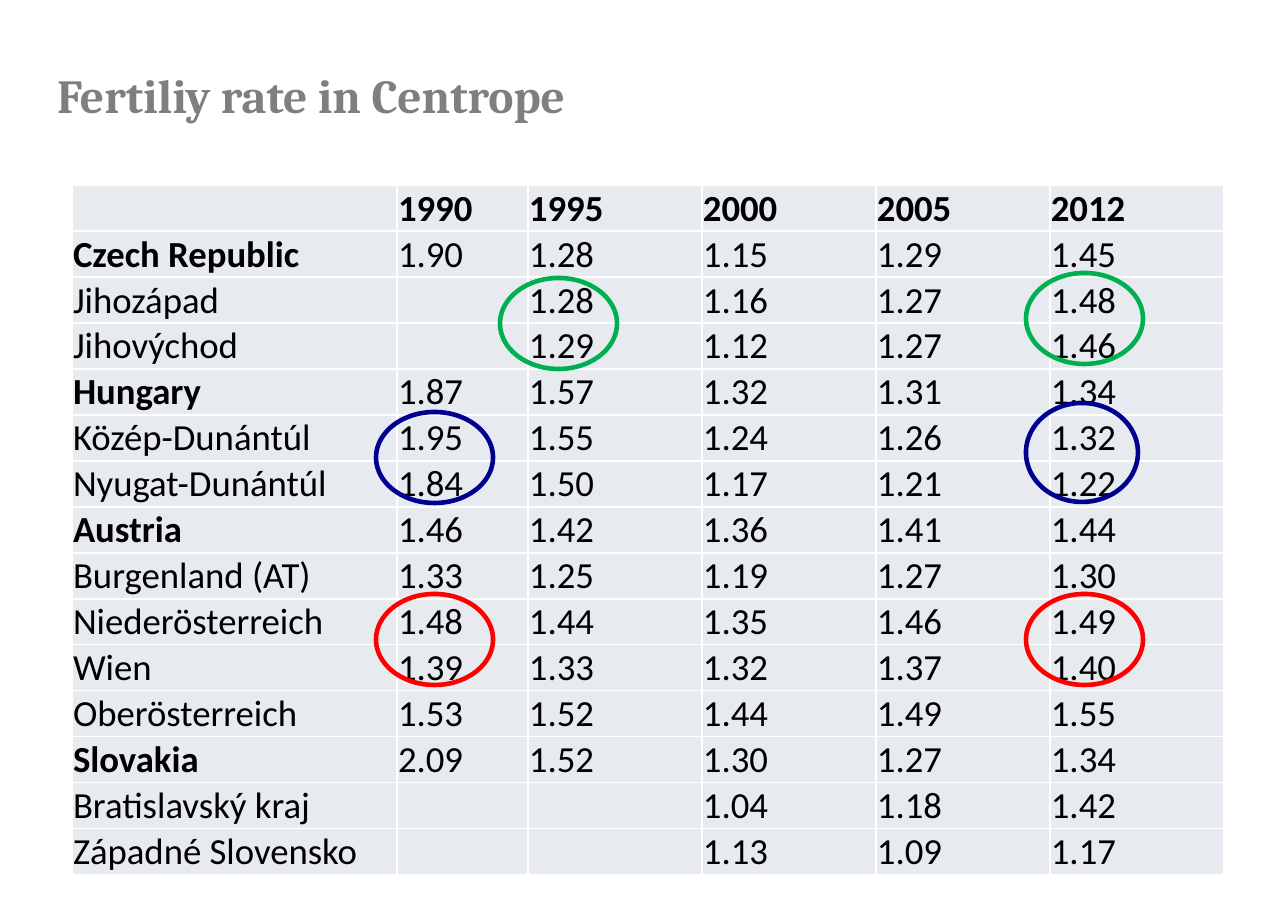
from lxml.etree import SubElement
from pptx import Presentation
from pptx.dml.color import RGBColor
from pptx.enum.shapes import MSO_SHAPE as Shape
from pptx.enum.text import MSO_ANCHOR as Anchor, MSO_AUTO_SIZE as AutoSize, PP_ALIGN as Align
from pptx.oxml.ns import qn
from pptx.util import Pt

PX = 8298
BLACK = RGBColor(0x00, 0x00, 0x00)
WHITE = RGBColor(0xFF, 0xFF, 0xFF)
GRAY = RGBColor(0x7F, 0x7F, 0x7F)
PALE = RGBColor(0xE7, 0xEA, 0xEF)
BLUE = RGBColor(0x00, 0x00, 0x90)
RED = RGBColor(0xFF, 0x00, 0x00)
GREEN = RGBColor(0x00, 0xB0, 0x50)

TITLE_FONT = {"name": "Cambria", "size": Pt(31), "bold": True}
CELL_FONT = {"name": "Calibri", "size": Pt(24)}
TITLE_FRAME = {
    "word_wrap": True,
    "auto_size": AutoSize.NONE,
    "vertical_anchor": Anchor.MIDDLE,
    "margin_left": 12 * PX,
    "margin_right": 12 * PX,
    "margin_top": 6 * PX,
    "margin_bottom": 6 * PX,
}
CELL_FORMAT = {
    "vertical_anchor": Anchor.BOTTOM,
    "margin_left": PX,
    "margin_right": PX,
    "margin_top": PX,
    "margin_bottom": 0,
}
TABLE_FORMAT = {"first_row": False, "horz_banding": False}

COLUMN_WIDTHS = [325, 131, 174, 174, 174, 174]
ROW_HEIGHT = 46
COUNTRIES = {"Czech Republic", "Hungary", "Austria", "Slovakia"}
RATES = [
    ("", "1990", "1995", "2000", "2005", "2012"),
    ("Czech Republic", "1.90", "1.28", "1.15", "1.29", "1.45"),
    ("Jihozápad", "", "1.28", "1.16", "1.27", "1.48"),
    ("Jihovýchod", "", "1.29", "1.12", "1.27", "1.46"),
    ("Hungary", "1.87", "1.57", "1.32", "1.31", "1.34"),
    ("Közép-Dunántúl", "1.95", "1.55", "1.24", "1.26", "1.32"),
    ("Nyugat-Dunántúl", "1.84", "1.50", "1.17", "1.21", "1.22"),
    ("Austria", "1.46", "1.42", "1.36", "1.41", "1.44"),
    ("Burgenland (AT)", "1.33", "1.25", "1.19", "1.27", "1.30"),
    ("Niederösterreich", "1.48", "1.44", "1.35", "1.46", "1.49"),
    ("Wien", "1.39", "1.33", "1.32", "1.37", "1.40"),
    ("Oberösterreich", "1.53", "1.52", "1.44", "1.49", "1.55"),
    ("Slovakia", "2.09", "1.52", "1.30", "1.27", "1.34"),
    ("Bratislavský kraj", "", "", "1.04", "1.18", "1.42"),
    ("Západné Slovensko", "", "", "1.13", "1.09", "1.17"),
]
HIGHLIGHTS = [
    (376, 412, 117, 91, BLUE),
    (1026, 403, 112, 99, BLUE),
    (376, 594, 117, 91, RED),
    (1026, 594, 117, 91, RED),
    (1026, 273, 117, 91, GREEN),
    (500, 278, 117, 91, GREEN),
]


def apply(target, values):
    for key, value in values.items():
        setattr(target, key, value)


def box(left, top, width, height):
    return [length * PX for length in (left, top, width, height)]


def add_text(paragraph, text, font_format, color):
    run = paragraph.add_run()
    run.text = text
    apply(run.font, font_format)
    run.font.color.rgb = color


def add_title(slide, text):
    title = slide.shapes.title
    apply(title, dict(zip(("left", "top", "width", "height"), box(45, 65, 651, 65))))
    apply(title.text_frame, TITLE_FRAME)
    heading = title.text_frame.paragraphs[0]
    apply(heading, {"alignment": Align.LEFT, "line_spacing": Pt(34)})
    add_text(heading, text, TITLE_FONT, GRAY)


def add_borders(cell):
    properties = cell._tc.get_or_add_tcPr()
    for side in ("lnL", "lnR", "lnT", "lnB"):
        border = SubElement(properties, qn(f"a:{side}"), w=str(Pt(1)))
        fill = SubElement(border, qn("a:solidFill"))
        SubElement(fill, qn("a:srgbClr"), val=str(WHITE))


def fill_cell(cell, text, bold):
    apply(cell, CELL_FORMAT)
    add_borders(cell)
    cell.fill.solid()
    cell.fill.fore_color.rgb = PALE
    if text:
        add_text(cell.text_frame.paragraphs[0], text, CELL_FONT | {"bold": bold}, BLACK)


def add_rates(slide):
    frame = box(72, 185, sum(COLUMN_WIDTHS), ROW_HEIGHT * len(RATES))
    rates = slide.shapes.add_table(len(RATES), len(COLUMN_WIDTHS), *frame).table
    apply(rates, TABLE_FORMAT)
    for column, width in zip(rates.columns, COLUMN_WIDTHS):
        column.width = width * PX
    for row_index, (row, entries) in enumerate(zip(rates.rows, RATES)):
        row.height = ROW_HEIGHT * PX
        for cell, entry in zip(row.cells, entries):
            fill_cell(cell, entry, row_index == 0 or entry in COUNTRIES)


def add_highlight(slide, left, top, width, height, color):
    ring = slide.shapes.add_shape(Shape.OVAL, *box(left, top, width, height))
    ring.shadow.inherit = False
    ring.fill.background()
    ring.line.color.rgb = color
    ring.line.width = Pt(3)


def main():
    deck = Presentation()
    apply(deck, {"slide_width": 1288 * PX, "slide_height": 911 * PX})
    slide = deck.slides.add_slide(deck.slide_layouts[5])
    add_title(slide, "Fertiliy rate in Centrope")
    add_rates(slide)
    for highlight in HIGHLIGHTS:
        add_highlight(slide, *highlight)
    deck.save("out.pptx")


if __name__ == "__main__":
    main()
